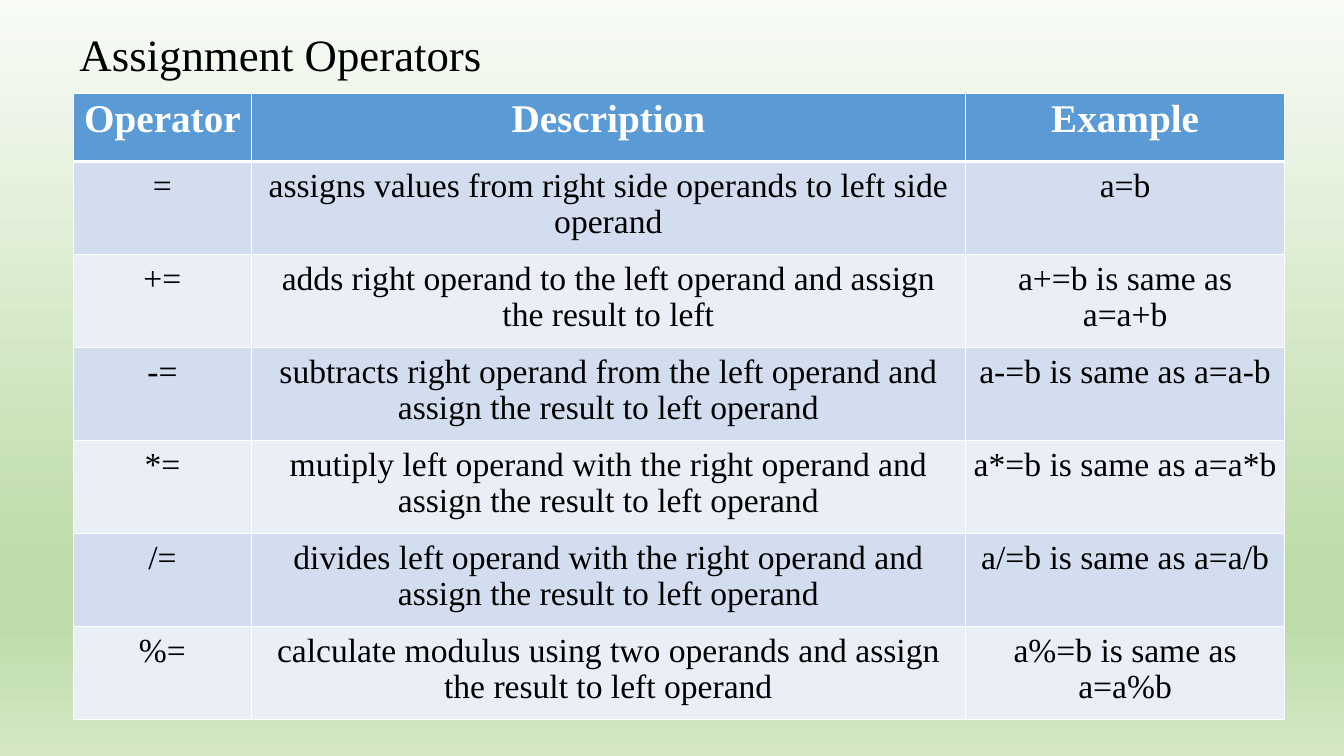
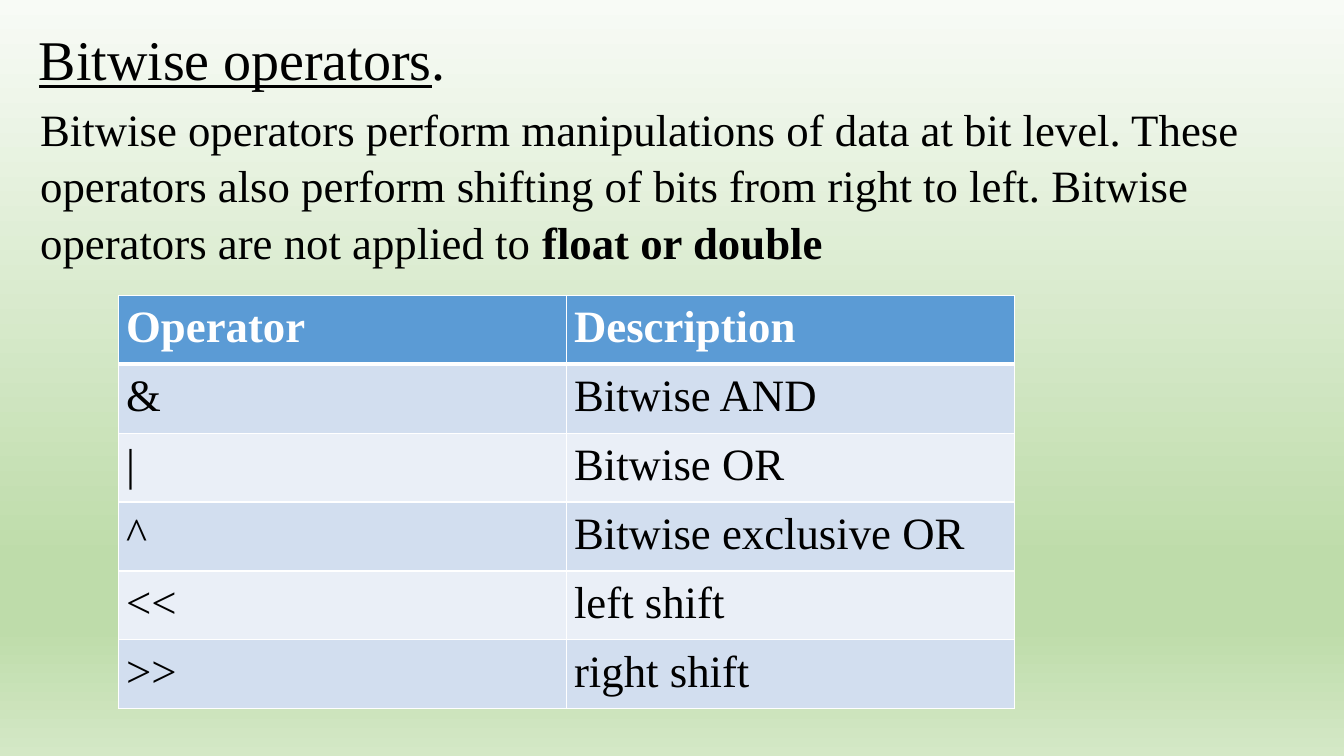
import lxml.etree
import pptx
import pptx.dml.color
import pptx.enum.text
import pptx.oxml.ns
import pptx.util

Pt = pptx.util.Pt
qn = pptx.oxml.ns.qn
ALIGN = pptx.enum.text.PP_ALIGN

COLORS = {
    "text": "000000",
    "header": "5B9BD5",
    "odd_row": "D2DEEF",
    "even_row": "EAEFF7",
    "white": "FFFFFF",
}
BACKGROUND_STOPS = [(0, "F8FBF6"), (74, "BEDCAA"), (83, "BEDCAA"), (100, "D4E8C6")]
FONT = "Times New Roman"
CELL_INSET = 5.4


def write_runs(paragraph, runs, size, color="text"):
    """Add (text, extra font values) pairs to the paragraph."""
    for text, extra in runs:
        run = paragraph.add_run()
        run.text = text
        run.font.color.rgb = pptx.dml.color.RGBColor.from_string(COLORS[color])
        values = {"name": FONT, "size": Pt(size), "bold": False} | extra
        for name, value in values.items():
            setattr(run.font, name, value)


def add_operator_table(slide, left, top, widths, heights, rows, sizes, header_inset, paragraph_format):
    """Add a banded table; sizes holds the header and the body text size."""
    table = slide.shapes.add_table(
        len(rows), len(widths), Pt(left), Pt(top), Pt(sum(widths)), Pt(sum(heights))
    ).table
    for column, width in zip(table.columns, widths):
        column.width = Pt(width)
    for row_index, texts in enumerate(rows):
        table.rows[row_index].height = Pt(heights[row_index])
        is_header = row_index == 0
        fill = "header" if is_header else ("even_row", "odd_row")[row_index % 2]
        line_widths = {
            "lnL": 1,
            "lnR": 1,
            "lnT": 3 if row_index == 1 else 1,
            "lnB": 3 if is_header else 1,
        }
        for column_index, text in enumerate(texts):
            cell = table.cell(row_index, column_index)
            cell.fill.solid()
            cell.fill.fore_color.rgb = pptx.dml.color.RGBColor.from_string(COLORS[fill])
            inset_top = header_inset if is_header else CELL_INSET
            cell.margin_top = cell.margin_bottom = Pt(inset_top)
            cell.margin_left = cell.margin_right = Pt(CELL_INSET)
            paragraph = cell.text_frame.paragraphs[0]
            for name, value in paragraph_format.items():
                setattr(paragraph, name, value)
            write_runs(
                paragraph,
                [(text, {"bold": is_header})],
                sizes[0] if is_header else sizes[1],
                "white" if is_header else "text",
            )
            properties = cell._tc.get_or_add_tcPr()
            for position, (tag, width) in enumerate(line_widths.items()):
                line = lxml.etree.Element(qn(f"a:{tag}"), w=str(Pt(width)))
                solid = lxml.etree.SubElement(line, qn("a:solidFill"))
                lxml.etree.SubElement(solid, qn("a:srgbClr"), val=COLORS["white"])
                properties.insert(position, line)


presentation = pptx.Presentation()
presentation.slide_width = Pt(960)
presentation.slide_height = Pt(540)

# The slide master carries the shared background
master = presentation.slide_master
background_fill = master.background.fill
background_fill.gradient()
background_fill.gradient_angle = 270
stop_list = next(master.element.iter(qn("a:gsLst")))
for stop in list(stop_list):
    stop_list.remove(stop)
for percent, color in BACKGROUND_STOPS:
    stop = lxml.etree.SubElement(stop_list, qn("a:gs"), pos=str(percent * 1000))
    lxml.etree.SubElement(stop, qn("a:srgbClr"), val=color)

blank_layout = presentation.slide_layouts[6]
assignment_slide = presentation.slides.add_slide(blank_layout)
bitwise_slide = presentation.slides.add_slide(blank_layout)

assignment_rows = [
    ("Operator", "Description", "Example"),
    ("=", "assigns values from right side operands to left side operand", "a=b"),
    ("+=", "adds right operand to the left operand and assign the result to left", "a+=b is same as a=a+b"),
    ("-=", "subtracts right operand from the left operand and assign the result to left operand", "a-=b is same as a=a-b"),
    ("*=", "mutiply left operand with the right operand and assign the result to left operand", "a*=b is same as a=a*b"),
    ("/=", "divides left operand with the right operand and assign the result to left operand", "a/=b is same as a=a/b"),
    ("%=", "calculate modulus using two operands and assign the result to left operand", "a%=b is same as a=a%b"),
]
add_operator_table(
    assignment_slide, 52.7, 67, [126.7, 510.3, 228], [48.4] + [66.4] * 6,
    assignment_rows, (28, 24), 3.6, {"alignment": ALIGN.CENTER, "line_spacing": 0.96},
)

bitwise_rows = [
    ("Operator", "Description"),
    ("&", "Bitwise AND"),
    ("|", "Bitwise OR"),
    ("^", "Bitwise exclusive OR"),
    ("<<", "left shift"),
    (">>", "right shift"),
]
add_operator_table(
    bitwise_slide, 84.7, 211, [320, 320], [48] * 6,
    bitwise_rows, (32, 32), CELL_INSET, {"alignment": ALIGN.LEFT},
)

bitwise_text = (
    "Bitwise operators perform manipulations of data at bit level. "
    "These operators also perform shifting of bits from right to left. "
    "Bitwise operators are not applied to "
)
text_boxes = [
    (assignment_slide, (49.7, 13.7, 893.5, 46), 32, [("Assignment Operators", {})]),
    (bitwise_slide, (20.7, 11.5, 908.6, 55.7), 40, [("Bitwise operators", {"underline": True}), (".", {})]),
    (bitwise_slide, (21.6, 67, 945.4, 123.6), 32, [(bitwise_text, {}), ("float or double", {"bold": True})]),
]
for slide, box, size, runs in text_boxes:
    text_frame = slide.shapes.add_textbox(*map(Pt, box)).text_frame
    text_frame.word_wrap = True
    text_frame.auto_size = pptx.enum.text.MSO_AUTO_SIZE.SHAPE_TO_FIT_TEXT
    paragraph = text_frame.paragraphs[0]
    paragraph.line_spacing = 1.05
    write_runs(paragraph, runs, size)

presentation.save("out.pptx")
